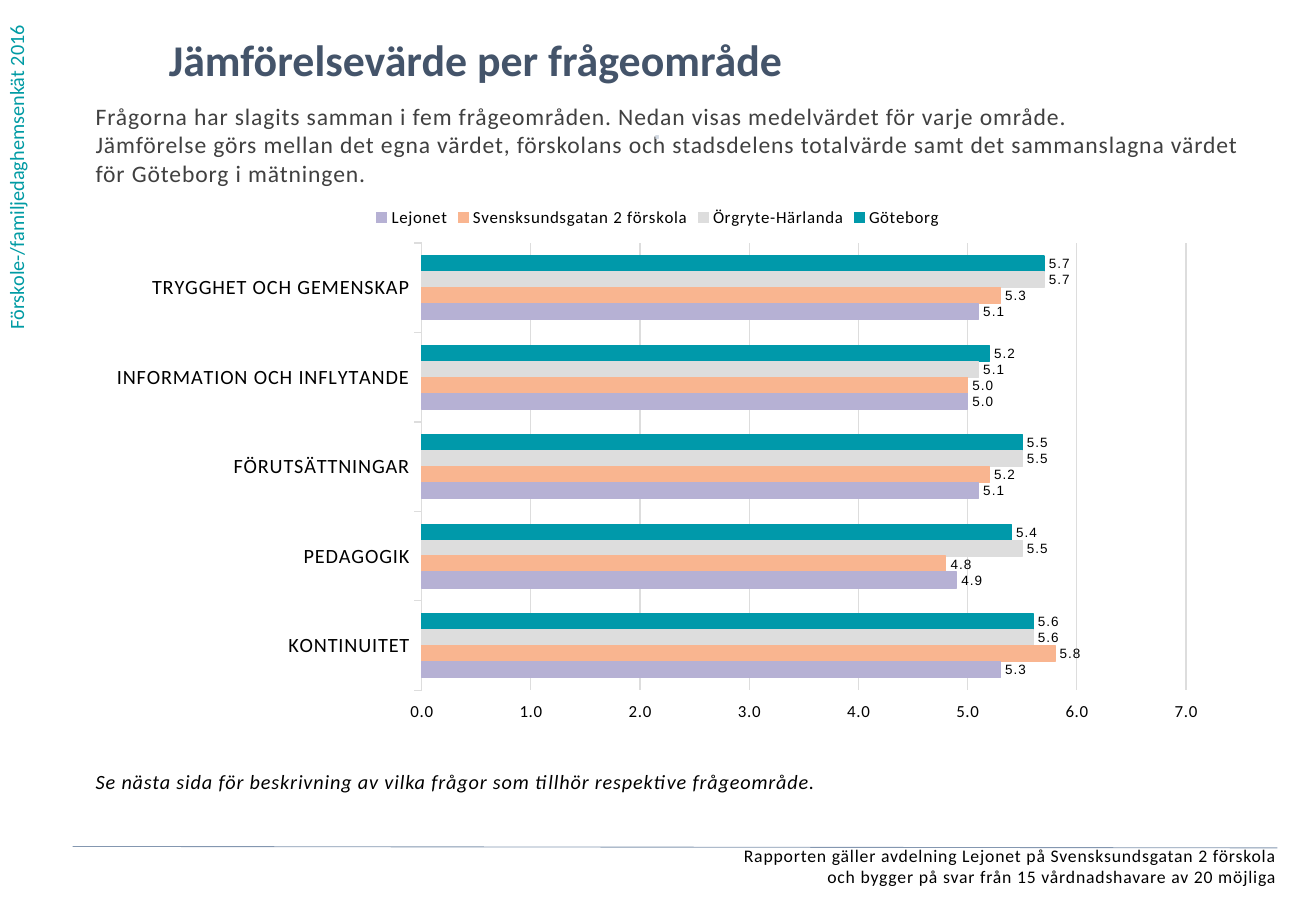
"""Build the slide comparing mean values per question area."""
from typing import NamedTuple

from pptx import Presentation
from pptx.chart.data import CategoryChartData
from pptx.dml.color import RGBColor
from pptx.enum.chart import (XL_CHART_TYPE, XL_LABEL_POSITION, XL_LEGEND_POSITION,
                             XL_TICK_LABEL_POSITION, XL_TICK_MARK)
from pptx.enum.shapes import MSO_CONNECTOR
from pptx.enum.text import PP_ALIGN
from pptx.oxml import parse_xml
from pptx.oxml.ns import nsdecls, qn
from pptx.util import Cm, Pt

BAR = XL_CHART_TYPE.BAR_CLUSTERED
TOP = XL_LEGEND_POSITION.TOP
OUTSIDE = XL_TICK_MARK.OUTSIDE
OUTSIDE_END = XL_LABEL_POSITION.OUTSIDE_END
HIGH = XL_TICK_LABEL_POSITION.HIGH
STRAIGHT = MSO_CONNECTOR.STRAIGHT
LEFT, CENTER, RIGHT = PP_ALIGN.LEFT, PP_ALIGN.CENTER, PP_ALIGN.RIGHT

FONT = "Calibri"
BLACK, GRID = "000000", "DDDDDD"
NUMBER_FORMAT = "0.0;0.0"
LETTER_SPACING = "50"


class Box(NamedTuple):
    left: float
    top: float
    width: float
    height: float

    def lengths(self) -> list:
        return [Cm(v) for v in self]


class Series(NamedTuple):
    name: str
    color: str
    values: tuple


AREAS = ("TRYGGHET OCH GEMENSKAP", "INFORMATION OCH INFLYTANDE",
         "FÖRUTSÄTTNINGAR", "PEDAGOGIK", "KONTINUITET")
SERIES = (
    Series("Göteborg", "0099AA", (5.7, 5.2, 5.5, 5.4, 5.6)),
    Series("Örgryte-Härlanda", "DDDDDD", (5.7, 5.1, 5.5, 5.5, 5.6)),
    Series("Svensksundsgatan 2 förskola", "F9B590", (5.3, 5.0, 5.2, 4.8, 5.8)),
    Series("Lejonet", "B6B1D4", (5.1, 5.0, 5.1, 4.9, 5.3)),
)
INTRO = (
    "Frågorna har slagits samman i fem frågeområden. "
    "Nedan visas medelvärdet för varje område.\n"
    "Jämförelse görs mellan det egna värdet, förskolans och stadsdelens "
    "totalvärde samt det sammanslagna värdet för Göteborg i mätningen."
)
FOOTER = (
    "Rapporten gäller avdelning Lejonet på Svensksundsgatan 2 förskola\n"
    "och bygger på svar från 15 vårdnadshavare av 20 möjliga"
)


def rgb(color: str) -> RGBColor:
    return RGBColor.from_string(color)


def set_font(font, size: float, color: str = BLACK, name: str = FONT) -> None:
    font.size, font.name = Pt(size), name
    font.color.rgb = rgb(color)


def set_line(line, color: str, width: float) -> None:
    line.color.rgb = rgb(color)
    line.width = Pt(width)


def add_text(slide, box: Box, text: str, *, size: float, color: str = BLACK,
             bold: bool = False, italic: bool = False, align=LEFT,
             spaced: bool = True):
    sp = slide.shapes.add_textbox(*box.lengths())
    tf = sp.text_frame
    tf.word_wrap = True
    tf.margin_left = tf.margin_top = tf.margin_right = tf.margin_bottom = 0
    tf.text = text
    for p in tf.paragraphs:
        p.alignment = align
        for r in p.runs:
            set_font(r.font, size, color)
            r.font.bold, r.font.italic = bold, italic
            if spaced:
                r.font._element.set("spc", LETTER_SPACING)
    return tf


def add_side_label(slide, box: Box, text: str) -> None:
    tf = add_text(slide, box, text, size=12, color="009BA4", spaced=False)
    tf.margin_left = tf.margin_right = Cm(0.13)
    tf.margin_top = tf.margin_bottom = Cm(0.25)
    tf._txBody.bodyPr.set("vert", "vert270")


def add_rule(slide, x1: float, y1: float, x2: float, y2: float) -> None:
    cxn = slide.shapes.add_connector(STRAIGHT, Cm(x1), Cm(y1), Cm(x2), Cm(y2))
    set_line(cxn.line, "8497B0", 0.5)
    cxn._element.spPr.append(parse_xml(f"<a:effectLst {nsdecls('a')}/>"))


def set_plot_area(chart, area: Box) -> None:
    sizes = zip("xywh", area)
    values = "".join(f'<c:{key} val="{size}"/>' for key, size in sizes)
    plot_area = chart._chartSpace.chart.plotArea
    for layout in plot_area.findall(qn("c:layout")):
        plot_area.remove(layout)
    plot_area.insert(0, parse_xml(
        f'<c:layout {nsdecls("c")}><c:manualLayout>'
        '<c:layoutTarget val="inner"/><c:xMode val="edge"/>'
        f'<c:yMode val="edge"/>{values}</c:manualLayout></c:layout>'))


def format_axes(chart) -> None:
    cat, val = chart.category_axis, chart.value_axis
    cat.reverse_order = True
    cat.major_tick_mark = val.major_tick_mark = OUTSIDE
    set_line(cat.format.line, GRID, 0.75)
    set_font(cat.tick_labels.font, 12)
    val.minimum_scale, val.maximum_scale, val.major_unit = 0, 7, 1
    val.tick_label_position = HIGH
    val.format.line.fill.background()
    set_line(val.major_gridlines.format.line, GRID, 0.75)
    set_font(val.tick_labels.font, 10)
    val.tick_labels.number_format = NUMBER_FORMAT
    val.tick_labels.number_format_is_linked = False


def format_series(ser, color: str) -> None:
    ser.format.fill.solid()
    ser.format.fill.fore_color.rgb = rgb(color)
    set_line(ser.format.line, color, 0.75)
    labels = ser.data_labels
    labels.show_value = True
    labels.position = OUTSIDE_END
    labels.number_format = NUMBER_FORMAT
    labels.number_format_is_linked = False
    set_font(labels.font, 8, name="Arial")


def add_area_chart(slide, box: Box) -> None:
    data = CategoryChartData(number_format="0.0")
    data.categories = AREAS
    for s in SERIES:
        data.add_series(s.name, s.values)
    chart = slide.shapes.add_chart(BAR, *box.lengths(), data).chart
    chart.has_title = False
    set_font(chart.font, 10)
    chart.has_legend = True
    chart.legend.position = TOP
    chart.legend.include_in_layout = False
    set_font(chart.legend.font, 10)
    plot = chart.plots[0]
    plot.gap_width, plot.overlap = 162, 0
    plot.vary_by_categories = False
    for ser, s in zip(plot.series, SERIES):
        format_series(ser, s.color)
    format_axes(chart)
    set_plot_area(chart, Box(0.29, 0.09, 0.68, 0.83))
    for props in chart._chartSpace.iter(qn("a:defRPr")):
        props.set("spc", LETTER_SPACING)


def main() -> None:
    prs = Presentation()
    prs.slide_width, prs.slide_height = Cm(27.51), Cm(19.05)
    slide = prs.slides.add_slide(prs.slide_layouts[6])
    add_side_label(slide, Box(-0.05, 0, 1.02, 7.14),
                   "Förskole-/familjedaghemsenkät 2016")
    add_text(slide, Box(3.53, 0.69, 21.18, 1.45),
             "Jämförelsevärde per frågeområde",
             size=26, color="44546A", bold=True, spaced=False)
    add_text(slide, Box(2.0, 2.13, 24.03, 2.57), INTRO,
             size=14, color="404040")
    add_text(slide, Box(0.3, 17.66, 26.39, 1.09), FOOTER,
             size=10.5, align=RIGHT)
    add_text(slide, Box(9.83, 2.59, 7.82, 0.99), "⋅",
             size=12, color="D2D9E2", bold=True, align=CENTER)
    add_text(slide, Box(2.0, 16.08, 23.5, 0.6),
             "Se nästa sida för beskrivning av vilka frågor som tillhör "
             "respektive frågeområde.", size=12, italic=True)
    add_area_chart(slide, Box(2.0, 4.07, 23.5, 11.27))
    add_rule(slide, 1.52, 17.7, 26.7, 17.73)
    prs.save("out.pptx")


if __name__ == "__main__":
    main()
